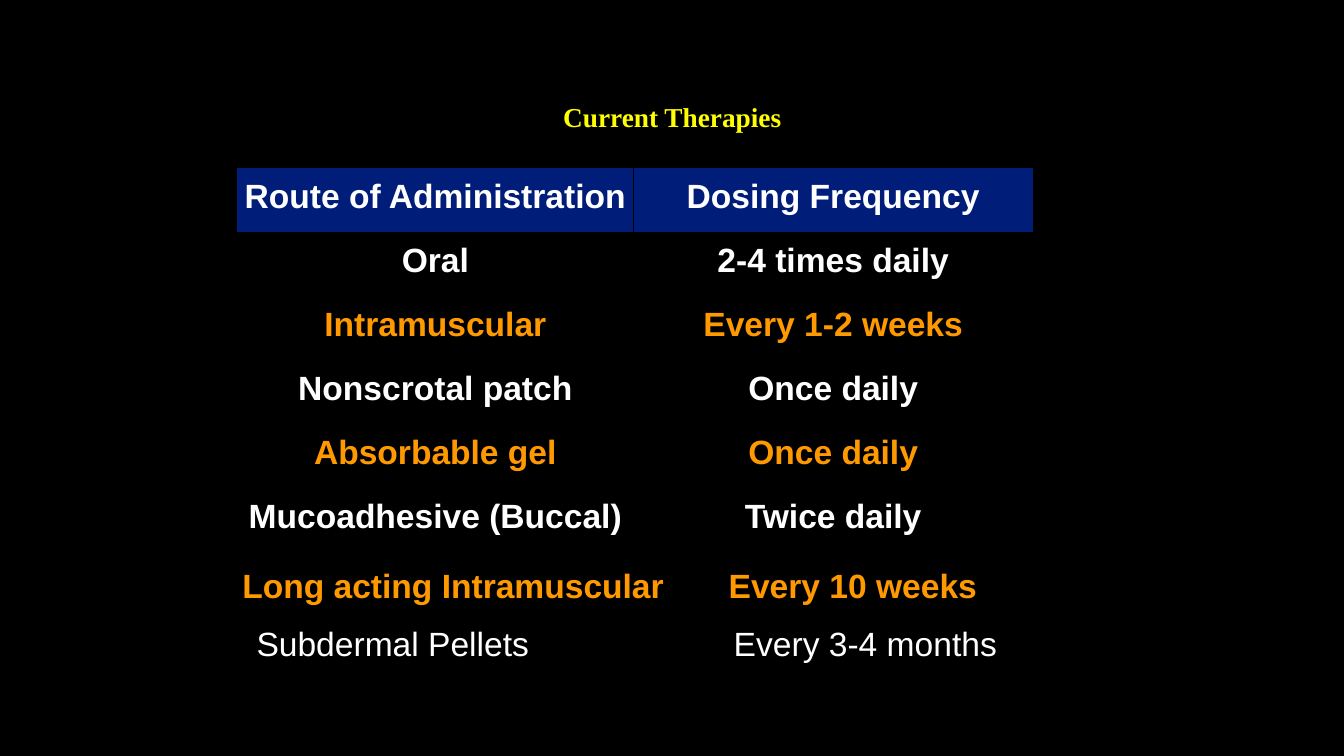
from dataclasses import dataclass

from lxml import etree
from pptx import Presentation
from pptx import util as u
from pptx.dml.color import RGBColor
from pptx.enum import text
from pptx.oxml import ns


@dataclass(frozen=True)
class Theme:
    background: str = "000000"
    title: str = "FFFF00"
    header: str = "001D7A"
    white: str = "FFFFFF"
    orange: str = "FF9900"
    title_size: int = 39
    body_size: int = 48
    title_font: str = "Times New Roman"
    body_font: str = "Arial"
    plain_table: str = "{2D5ABB26-0587-4C30-8999-92F81FD0307C}"


T = Theme()

THERAPIES = [
    ("Route of Administration", "Dosing Frequency"),
    ("Oral", "2-4 times daily"),
    ("Intramuscular", "Every 1-2 weeks"),
    ("Nonscrotal patch", "Once daily"),
    ("Absorbable gel", "Once daily"),
    ("Mucoadhesive (Buccal)", "Twice daily"),
]


def write(tf, words, *, size=T.body_size, font=T.body_font, color=T.white,
          bold=True, align=text.PP_ALIGN.CENTER, spacing=None, tab=None):
    """Fill a text frame with one formatted paragraph."""
    p = tf.paragraphs[0]
    if tab is not None:
        tabs = etree.SubElement(p._p.get_or_add_pPr(), ns.qn("a:tabLst"))
        etree.SubElement(tabs, ns.qn("a:tab"), pos=str(u.Inches(tab)), algn="l")
    p.alignment = align
    if spacing is not None:
        p.line_spacing = spacing
    r = p.add_run()
    r.text = words
    r.font.name, r.font.size, r.font.bold = font, u.Pt(size), bold
    r.font.color.rgb = RGBColor.from_string(color)


def add_title(slide, words):
    sp = slide.shapes.add_textbox(u.Inches(4.71), u.Inches(1.31),
                                  u.Inches(17.26), u.Inches(1.38))
    tf = sp.text_frame
    tf.word_wrap = True
    tf.vertical_anchor = text.MSO_ANCHOR.BOTTOM
    tf.margin_left = tf.margin_right = u.Inches(0.05)
    write(tf, words, size=T.title_size, font=T.title_font, color=T.title, spacing=0.8)


def add_plain_table(slide, left, top, widths, row_height, rows=1):
    """Add a table without banding, grid or cell fills."""
    table = slide.shapes.add_table(
        rows, len(widths), u.Inches(left), u.Inches(top),
        u.Inches(sum(widths)), u.Inches(row_height * rows)).table
    table.first_row = table.horz_banding = False
    table._tbl.tblPr.find(ns.qn("a:tableStyleId")).text = T.plain_table
    for column, width in zip(table.columns, widths):
        column.width = u.Inches(width)
    for cell in table.iter_cells():
        cell.fill.background()
        cell.margin_left = cell.margin_right = u.Inches(0.1)
        cell.margin_top = cell.margin_bottom = u.Inches(0.1)
    return table


def add_divider(cell):
    """Draw a thin dark line on the right side of a cell."""
    line = etree.Element(ns.qn("a:lnR"), w=str(u.Pt(1)))
    fill = etree.SubElement(line, ns.qn("a:solidFill"))
    etree.SubElement(fill, ns.qn("a:srgbClr"), val=T.background)
    cell._tc.get_or_add_tcPr().insert(0, line)


def add_therapy_table(slide):
    table = add_plain_table(slide, 4.71, 3.33, [7.86, 7.93], 1.27, len(THERAPIES))
    for i, row in enumerate(THERAPIES):
        color = T.orange if i and i % 2 == 0 else T.white
        for j, words in enumerate(row):
            cell = table.cell(i, j)
            cell.vertical_anchor = text.MSO_ANCHOR.MIDDLE
            write(cell.text_frame, words, color=color, spacing=0.8)
            if i == 0:
                cell.fill.solid()
                cell.fill.fore_color.rgb = RGBColor.from_string(T.header)
    add_divider(table.cell(0, 0))


def add_single_row(slide, left, top, width, height, words, **style):
    """Add a one-cell table whose two entries are parted by a tab."""
    table = add_plain_table(slide, left, top, [width], height)
    write(table.cell(0, 0).text_frame, words, align=text.PP_ALIGN.LEFT, **style)


def main():
    prs = Presentation()
    prs.slide_width, prs.slide_height = u.Inches(26.67), u.Inches(15)
    slide = prs.slides.add_slide(prs.slide_layouts[6])
    slide.background.fill.solid()
    slide.background.fill.fore_color.rgb = RGBColor.from_string(T.background)

    # Title and main table
    add_title(slide, "Current Therapies")
    add_therapy_table(slide)

    # Further therapies below the table
    add_single_row(slide, 4.71, 11.17, 15.79, 2.97,
                   "Long acting Intramuscular\tEvery 10 weeks",
                   color=T.orange, tab=9.65)
    add_single_row(slide, 4.99, 12.33, 15.51, 1,
                   "Subdermal Pellets\tEvery 3-4 months", bold=False, tab=9.47)

    prs.save("out.pptx")


if __name__ == "__main__":
    main()
